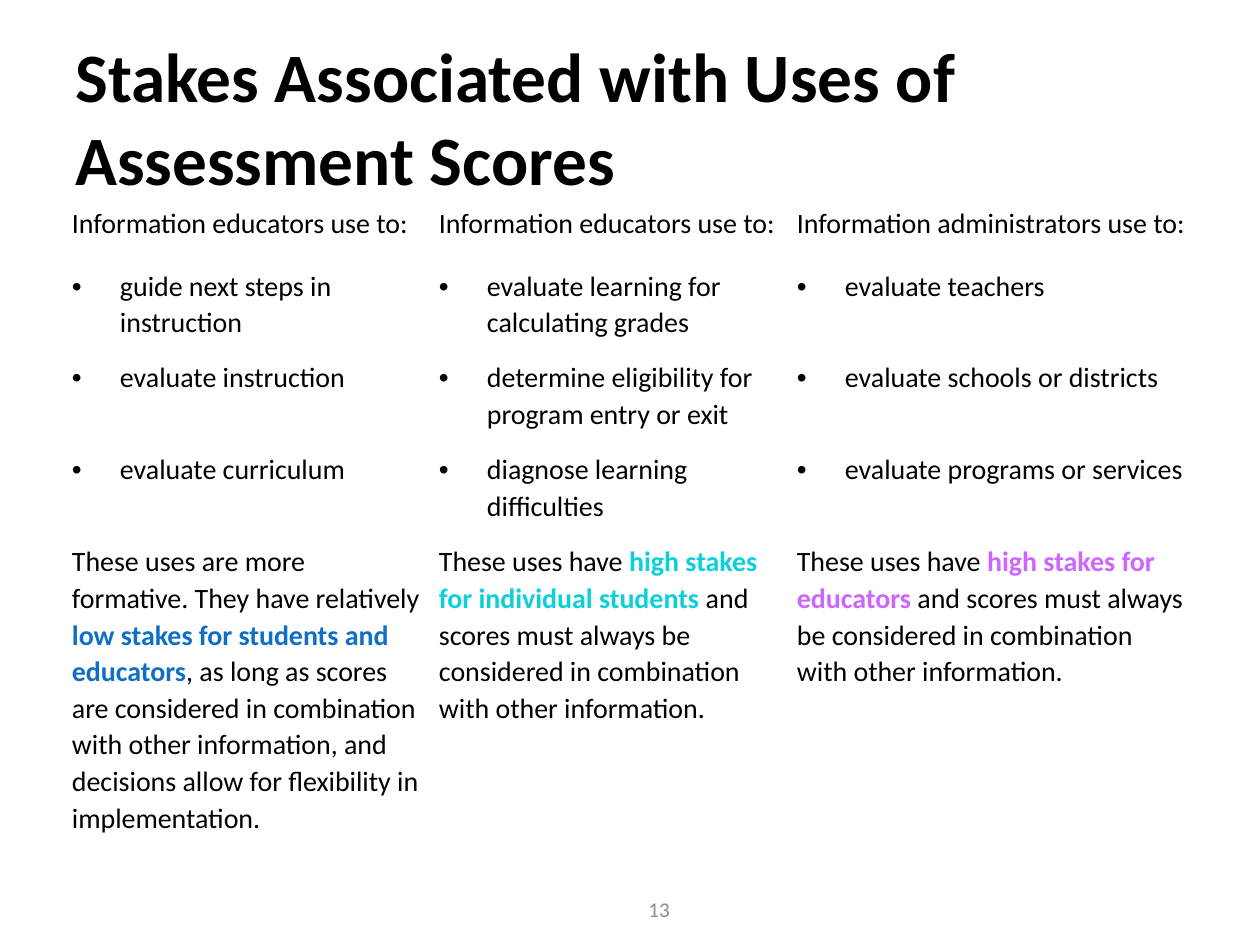
from dataclasses import dataclass

from lxml.etree import SubElement
from pptx import Presentation
from pptx.dml.color import RGBColor
from pptx.enum.text import MSO_ANCHOR, PP_ALIGN
from pptx.oxml.ns import qn
from pptx.util import Emu, Pt

FONT = "Calibri"
BLACK = "000000"
GREY = "8C8C8C"


@dataclass
class Column:
    width: int
    heading: str
    uses: list[str]
    before: str
    stakes: str
    after: str
    color: str


COLUMNS = [
    Column(
        367,
        "Information educators use to:",
        ["guide next steps in instruction", "evaluate instruction", "evaluate curriculum"],
        "These uses are more formative. They have relatively ",
        "low stakes for students and educators",
        ", as long as scores are considered in combination with other information, "
        "and decisions allow for flexibility in implementation.",
        "0F6FC6",
    ),
    Column(
        358,
        "Information educators use to:",
        [
            "evaluate learning for calculating grades",
            "determine eligibility for program entry or exit",
            "diagnose learning difficulties",
        ],
        "These uses have ",
        "high stakes for individual students ",
        "and scores must always be considered in combination with other information.",
        "0BD0D9",
    ),
    Column(
        409,
        "Information administrators use to:",
        ["evaluate teachers", "evaluate schools or districts", "evaluate programs or services"],
        "These uses have ",
        "high stakes for educators",
        " and scores must always be considered in combination with other information.",
        "CC66FF",
    ),
]
ROW_HEIGHTS = [88, 92, 92, 92, 314]


def px(n: int) -> Emu:
    return Emu(round(n * 914400 / 126))


def rgb(color: str) -> RGBColor:
    return RGBColor.from_string(color)


def add_run(p, text: str, size: float, color: str = BLACK, bold: bool = False) -> None:
    r = p.add_run()
    r.text = text
    r.font.name = FONT
    r.font.size = Pt(size)
    r.font.bold = bold
    r.font.color.rgb = rgb(color)


def add_text(s, box: tuple[int, int, int, int], text: str, size: float,
             color: str, bold: bool, align: PP_ALIGN) -> None:
    tf = s.shapes.add_textbox(*map(px, box)).text_frame
    tf.word_wrap = True
    tf.vertical_anchor = MSO_ANCHOR.MIDDLE
    p = tf.paragraphs[0]
    p.alignment = align
    add_run(p, text, size, color, bold)


def add_bullet(p) -> None:
    pPr = p._p.get_or_add_pPr()
    pPr.set("marL", str(px(48)))
    pPr.set("indent", str(-px(48)))
    SubElement(pPr, qn("a:buFont"), typeface="Arial")
    SubElement(pPr, qn("a:buChar"), char="•")


def clear_borders(cell) -> None:
    tcPr = cell._tc.get_or_add_tcPr()
    for side in ("a:lnL", "a:lnR", "a:lnT", "a:lnB"):
        SubElement(SubElement(tcPr, qn(side), w="0"), qn("a:noFill"))


def fill_cell(cell, runs: list[tuple[str, str, bool]], anchor: MSO_ANCHOR,
              bullet: bool = False) -> None:
    clear_borders(cell)
    cell.fill.background()
    cell.margin_left = cell.margin_right = px(9)
    cell.margin_top = cell.margin_bottom = 0
    cell.vertical_anchor = anchor
    p = cell.text_frame.paragraphs[0]
    if bullet:
        add_bullet(p)
    p.line_spacing = 1.07
    for text, color, bold in runs:
        add_run(p, text, 16, color, bold)


def add_stakes_table(s, left: int, top: int) -> None:
    width = sum(c.width for c in COLUMNS)
    frame = s.shapes.add_table(len(ROW_HEIGHTS), len(COLUMNS), px(left), px(top),
                               px(width), px(sum(ROW_HEIGHTS)))
    table = frame.table
    table.first_row = table.horz_banding = False
    for row, height in zip(table.rows, ROW_HEIGHTS):
        row.height = px(height)
    for i, column in enumerate(COLUMNS):
        table.columns[i].width = px(column.width)
        fill_cell(table.cell(0, i), [(column.heading, BLACK, False)], MSO_ANCHOR.MIDDLE)
        for j, use in enumerate(column.uses, 1):
            fill_cell(table.cell(j, i), [(use, BLACK, False)], MSO_ANCHOR.TOP, bullet=True)
        summary = [
            (column.before, BLACK, False),
            (column.stakes, column.color, True),
            (column.after, BLACK, False),
        ]
        fill_cell(table.cell(len(ROW_HEIGHTS) - 1, i), summary, MSO_ANCHOR.TOP)


def main() -> None:
    prs = Presentation()
    prs.slide_width, prs.slide_height = px(1260), px(945)
    s = prs.slides.add_slide(prs.slide_layouts[6])
    add_text(s, (63, 37, 1134, 158), "Stakes Associated with Uses of Assessment Scores",
             39.6, BLACK, True, PP_ALIGN.LEFT)
    add_stakes_table(s, 63, 179)
    add_text(s, (388, 884, 294, 50), "13", 12, GREY, False, PP_ALIGN.RIGHT)
    prs.save("out.pptx")


if __name__ == "__main__":
    main()
